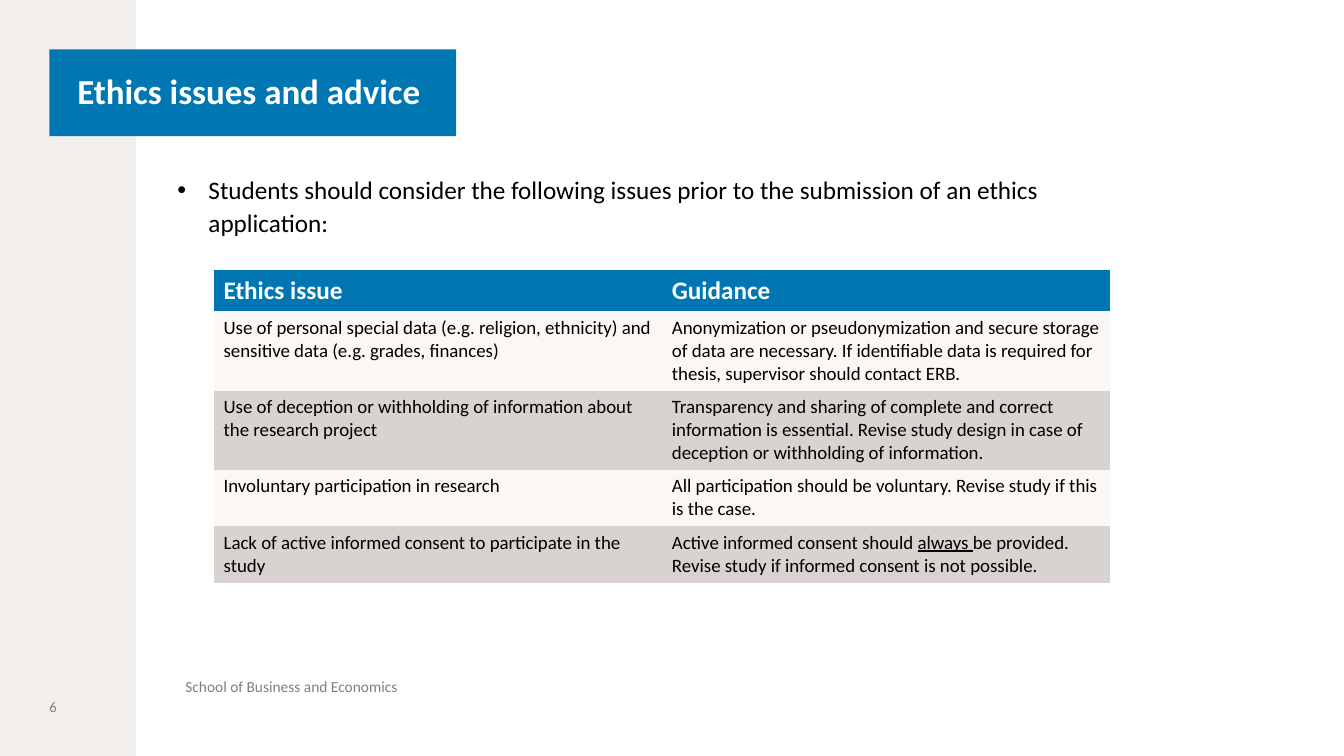
from lxml.etree import SubElement
from pptx import Presentation
from pptx.dml.color import RGBColor
from pptx.enum.shapes import MSO_SHAPE as Preset
from pptx.enum.text import MSO_ANCHOR as Anchor, PP_ALIGN as Align
from pptx.oxml.ns import qn
from pptx.util import Inches, Pt

BLUE = RGBColor(0x00, 0x77, 0xB3)
SAND = RGBColor(0xF2, 0xEF, 0xED)
LIGHT = RGBColor(0xFA, 0xF7, 0xF5)
DARK = RGBColor(0xD8, 0xD3, 0xD0)
GRAY = RGBColor(0x7F, 0x7F, 0x7F)
BLACK = RGBColor(0x00, 0x00, 0x00)
WHITE = RGBColor(0xFF, 0xFF, 0xFF)

WIDTH, HEIGHT = Inches(13.34), Inches(7.5)
PLAIN_TABLE = "{2D5ABB26-0587-4C30-8999-92F81FD0307C}"

# Shares of the slide's size, in percent
BAND_WIDTH = 10.12
MARGIN_X, MARGIN_Y = 3.67, 6.53
FOOTER_Y, FOOTER_HEIGHT = 86.93, 13.07
ROW_HEIGHTS = [5.47, 10.47, 10.47, 7.47, 7.47]

HEADER_FORMAT = {"size": Pt(18), "bold": True}
CELL_FORMAT = {"size": Pt(13.5), "bold": False}

# A cell is a list of (text, underlined) runs
ISSUES = [
    ([("Ethics issue", False)], [("Guidance", False)]),
    ([("Use of personal special data (e.g. religion, ethnicity) and sensitive data "
       "(e.g. grades, finances)", False)],
     [("Anonymization or pseudonymization and secure storage of data are necessary. "
       "If identifiable data is required for thesis, supervisor should contact ERB.", False)]),
    ([("Use of deception or withholding of information about the research project", False)],
     [("Transparency and sharing of complete and correct information is essential. "
       "Revise study design in case of deception or withholding of information.", False)]),
    ([("Involuntary participation in research", False)],
     [("All participation should be voluntary. Revise study if this is the case.", False)]),
    ([("Lack of active informed consent to participate in the study", False)],
     [("Active informed consent should ", False), ("always ", True),
      ("be provided. Revise study if informed consent is not possible.", False)]),
]


def across(percent):
    return round(WIDTH * percent / 100)


def down(percent):
    return round(HEIGHT * percent / 100)


def area(left, top, width, height):
    return across(left), down(top), across(width), down(height)


def set_attributes(target, values):
    for name, value in values.items():
        setattr(target, name, value)


def format_font(font, color, values):
    set_attributes(font, {"name": "Calibri", **values})
    font.color.rgb = color


def add_rectangle(slide, place, color):
    shape = slide.shapes.add_shape(Preset.RECTANGLE, *place)
    shape.shadow.inherit = False
    shape.fill.solid()
    shape.fill.fore_color.rgb = color
    shape.line.fill.background()
    return shape


def write_text(shape, text, color, size, anchor=Anchor.TOP, insets=(0, 0, 0, 0),
               bold=False, spacing=1.0, bullet=False):
    frame = shape.text_frame
    left, top, right, bottom = (Pt(inset) for inset in insets)
    set_attributes(frame, {"word_wrap": True, "vertical_anchor": anchor,
                           "margin_left": left, "margin_top": top,
                           "margin_right": right, "margin_bottom": bottom})
    paragraph = frame.paragraphs[0]
    set_attributes(paragraph, {"alignment": Align.LEFT, "line_spacing": spacing})
    if bullet:
        add_bullet(paragraph)
    run = paragraph.add_run()
    run.text = text
    format_font(run.font, color, {"size": Pt(size), "bold": bold})


def add_bullet(paragraph):
    properties = paragraph._p.get_or_add_pPr()
    indent = Inches(0.31)
    properties.set("marL", str(indent))
    properties.set("indent", str(-indent))
    SubElement(properties, qn("a:buFont")).set("typeface", "Arial")
    SubElement(properties, qn("a:buChar")).set("char", "•")


def add_text(slide, place, text, color, size, **options):
    write_text(slide.shapes.add_textbox(*place), text, color, size, **options)


def fill_cell(cell, runs, background, color, values):
    cell.fill.solid()
    cell.fill.fore_color.rgb = background
    for text, underlined in runs:
        run = cell.text_frame.paragraphs[0].add_run()
        run.text = text
        format_font(run.font, color, {**values, "underline": underlined})


def add_issue_table(slide, place):
    frame = slide.shapes.add_table(len(ISSUES), len(ISSUES[0]), *place)
    for style in frame._element.iter(qn("a:tableStyleId")):
        style.text = PLAIN_TABLE
    table = frame.table
    set_attributes(table, {"first_row": False, "horz_banding": False})
    for index, (cells, height) in enumerate(zip(ISSUES, ROW_HEIGHTS)):
        table.rows[index].height = down(height)
        if index == 0:
            look = BLUE, WHITE, HEADER_FORMAT
        else:
            look = (LIGHT if index % 2 else DARK), BLACK, CELL_FORMAT
        for column, runs in enumerate(cells):
            fill_cell(table.cell(index, column), runs, *look)


def main():
    presentation = Presentation()
    set_attributes(presentation, {"slide_width": WIDTH, "slide_height": HEIGHT})
    slide = presentation.slides.add_slide(presentation.slide_layouts[6])

    # Side band and title
    add_rectangle(slide, area(0, 0, BAND_WIDTH, 100), SAND)
    title = add_rectangle(slide, area(MARGIN_X, MARGIN_Y, 30.28, 11.47), BLUE)
    write_text(title, "Ethics issues and advice", WHITE, 25, anchor=Anchor.MIDDLE,
               insets=(20, 17, 17, 17), bold=True, spacing=0.9)

    # Introduction
    add_text(slide, area(13.19, 22.67, 68.07, 62.27),
             "Students should consider the following issues prior to the "
             "submission of an ethics application:",
             BLACK, 18, spacing=1.1, bullet=True)

    # Footer and slide number
    add_text(slide, area(13.79, FOOTER_Y, 57.42, FOOTER_HEIGHT),
             "School of Business and Economics", GRAY, 11, insets=(0, 15, 0, 0))
    add_text(slide, area(MARGIN_X, FOOTER_Y, BAND_WIDTH - MARGIN_X, FOOTER_HEIGHT),
             "6", GRAY, 10.5, anchor=Anchor.MIDDLE)

    # Issues and guidance
    add_issue_table(slide, area(15.89, 35.73, 66.72, sum(ROW_HEIGHTS)))

    presentation.save("out.pptx")


if __name__ == "__main__":
    main()
